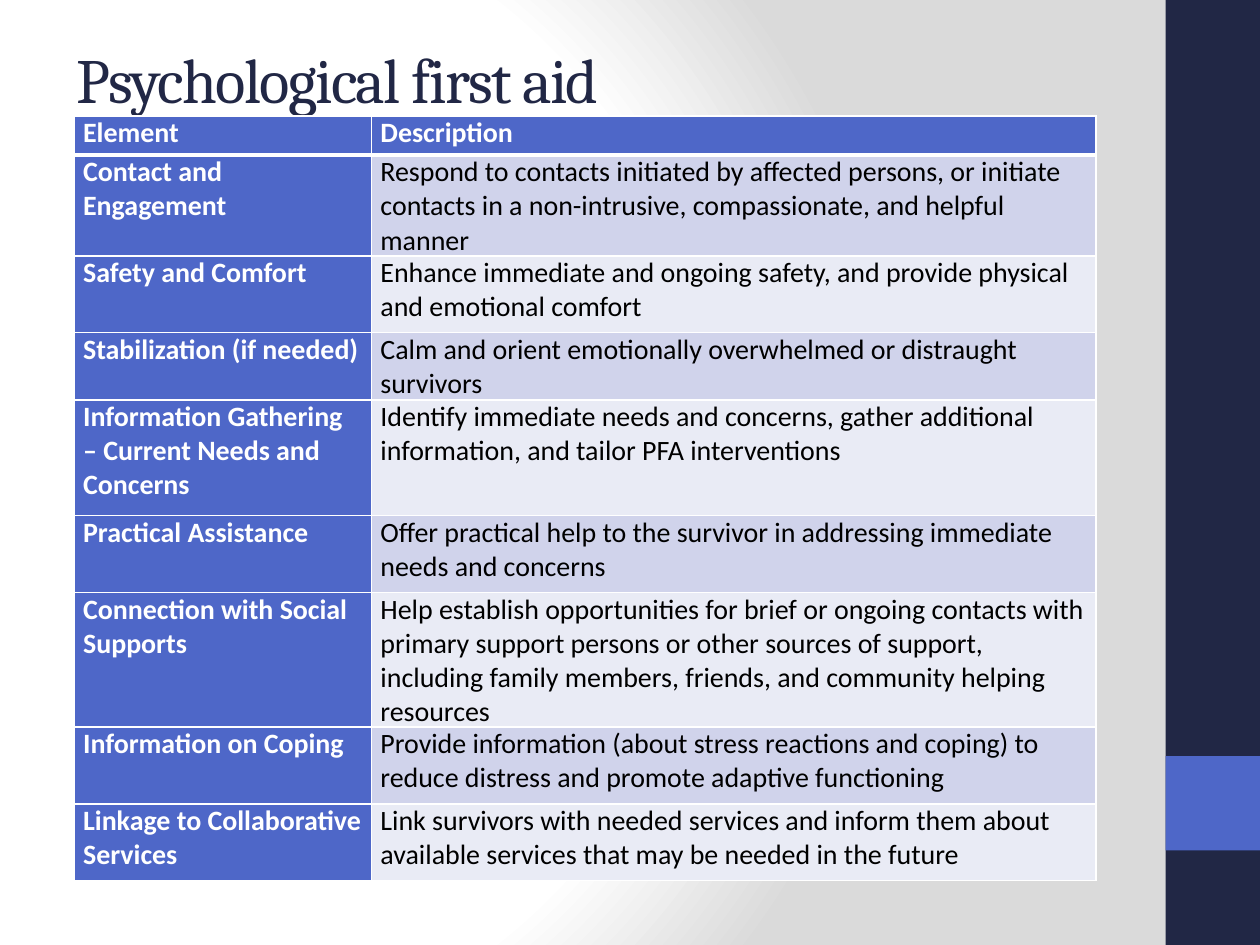
from lxml import etree
from pptx import Presentation
from pptx.dml.color import RGBColor
from pptx.enum.shapes import MSO_SHAPE
from pptx.enum.text import MSO_ANCHOR
from pptx.oxml import parse_xml
from pptx.oxml.ns import nsdecls, qn
from pptx.util import Inches, Pt

NAVY, BLUE, WHITE, BLACK = "212745", "4E67C8", "FFFFFF", "000000"
BANDS = ["D0D3EB", "E9EBF5"]

ROWS = [
    (0.31, "Element", "Description"),
    (0.61, "Contact and Engagement",
     "Respond to contacts initiated by affected persons, or initiate contacts "
     "in a non-intrusive, compassionate, and helpful manner"),
    (0.61, "Safety and Comfort",
     "Enhance immediate and ongoing safety, and provide physical and emotional comfort"),
    (0.31, "Stabilization (if needed)",
     "Calm and orient emotionally overwhelmed or distraught survivors"),
    (0.92, "Information Gathering – Current Needs and Concerns",
     "Identify immediate needs and concerns, gather additional information, "
     "and tailor PFA interventions"),
    (0.61, "Practical Assistance",
     "Offer practical help to the survivor in addressing immediate needs and concerns"),
    (0.92, "Connection with Social Supports",
     "Help establish opportunities for brief or ongoing contacts with primary "
     "support persons or other sources of support, including family members, "
     "friends, and community helping resources"),
    (0.61, "Information on Coping",
     "Provide information (about stress reactions and coping) to reduce distress "
     "and promote adaptive functioning"),
    (0.61, "Linkage to Collaborative Services",
     "Link survivors with needed services and inform them about available "
     "services that may be needed in the future"),
]


def color(value):
    return RGBColor.from_string(value)


def add_border(cell, index, side, width):
    line = parse_xml(
        f'<a:{side} {nsdecls("a")} w="{Pt(width)}"><a:solidFill>'
        f'<a:srgbClr val="{WHITE}"/></a:solidFill></a:{side}>')
    cell._tc.get_or_add_tcPr().insert(index, line)


presentation = Presentation()
presentation.slide_width = Inches(10)
presentation.slide_height = Inches(7.5)
slide = presentation.slides.add_slide(presentation.slide_layouts[6])

# Background: white fading to grey along a circular path
slide.background.fill.gradient()
gradient = slide.element.find(".//" + qn("a:gradFill"))
for child in list(gradient):
    gradient.remove(child)
stops = etree.SubElement(gradient, qn("a:gsLst"))
for position, value in [(0, WHITE), (75, WHITE), (100, "DADADA")]:
    stop = etree.SubElement(stops, qn("a:gs"), pos=str(position * 1000))
    etree.SubElement(stop, qn("a:srgbClr"), val=value)
circle = etree.SubElement(gradient, qn("a:path"), path="circle")
etree.SubElement(circle, qn("a:fillToRect"), l="20000", t="50000", r="100000", b="50000")

# Side band with its accent block
for top, height, fill in [(0, 7.5, NAVY), (6, 0.75, BLUE)]:
    shape = slide.shapes.add_shape(
        MSO_SHAPE.RECTANGLE, Inches(9.25), Inches(top), Inches(0.75), Inches(height))
    shape.shadow.inherit = False
    shape.fill.solid()
    shape.fill.fore_color.rgb = color(fill)
    shape.line.fill.background()

# Title
title = slide.shapes.add_textbox(Inches(0.51), Inches(0), Inches(8.59), Inches(1.25))
text_frame = title.text_frame
text_frame.word_wrap = True
text_frame.vertical_anchor = MSO_ANCHOR.MIDDLE
text_frame.text = "Psychological first aid"
run = text_frame.paragraphs[0].runs[0]
run.font.size = Pt(36)
run.font.name = "Cambria"
run.font.color.rgb = color(NAVY)
run.font._element.set("spc", "-100")

# Table
frame = slide.shapes.add_table(
    len(ROWS), 2, Inches(0.59), Inches(0.92), Inches(8.11), Inches(6.07))
table = frame.table
for column, width in zip(table.columns, [2.36, 5.75]):
    column.width = Inches(width)

for row_index, (height, *texts) in enumerate(ROWS):
    table.rows[row_index].height = Inches(height)
    for column_index, text in enumerate(texts):
        cell = table.cell(row_index, column_index)
        is_heading = row_index == 0 or column_index == 0
        cell.margin_left = cell.margin_right = Inches(0.07)
        cell.margin_top = cell.margin_bottom = 0
        cell.fill.solid()
        cell.fill.fore_color.rgb = color(BLUE if is_heading else BANDS[(row_index - 1) % 2])

        cell.text_frame.text = text
        paragraph = cell.text_frame.paragraphs[0]
        paragraph.space_before = paragraph.space_after = Pt(2)
        font = paragraph.runs[0].font
        font.size = Pt(16)
        font.name = "Calibri"
        font.bold = is_heading
        font.color.rgb = color(WHITE if is_heading else BLACK)

        # Thin white grid, thicker under the header row
        top_width = 3 if row_index == 1 else 1
        bottom_width = 3 if row_index == 0 else 1
        borders = [("lnL", 1), ("lnR", 1), ("lnT", top_width), ("lnB", bottom_width)]
        for index, (side, width) in enumerate(borders):
            add_border(cell, index, side, width)

frame.height = Inches(6.07)

presentation.save("out.pptx")
